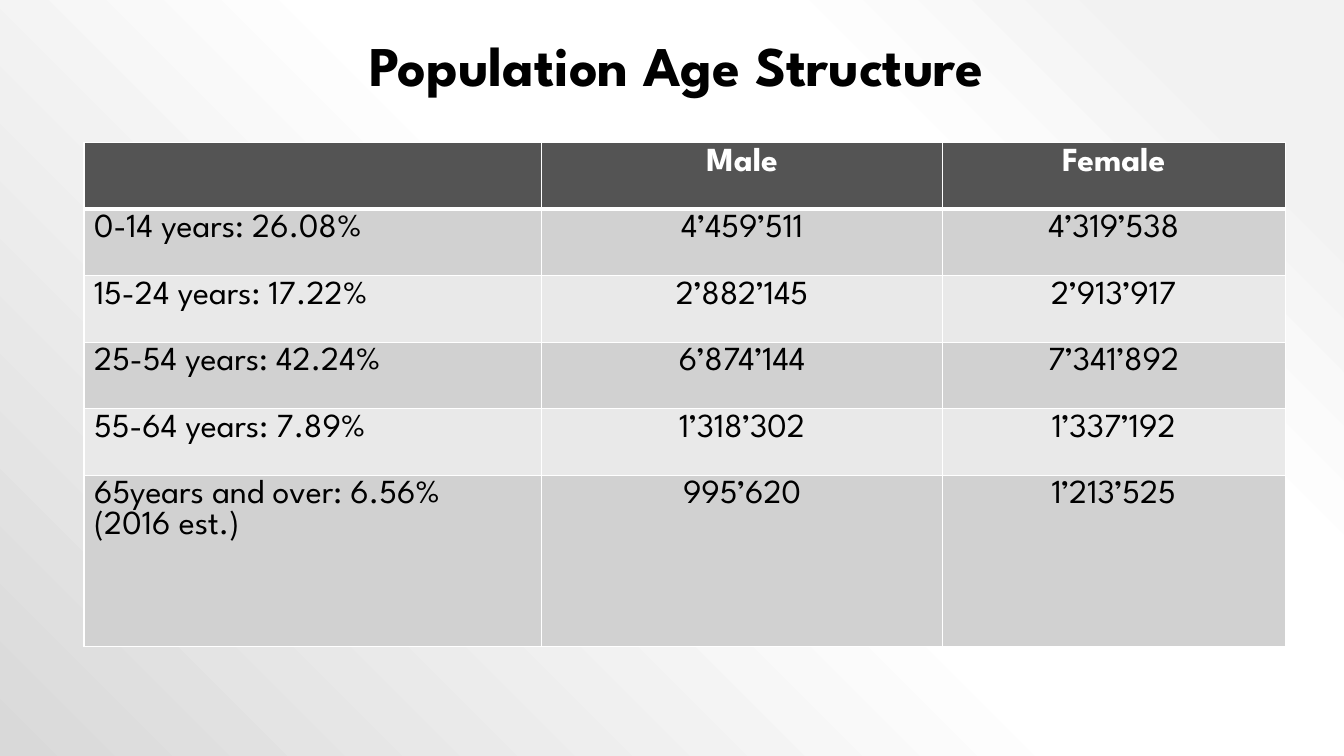
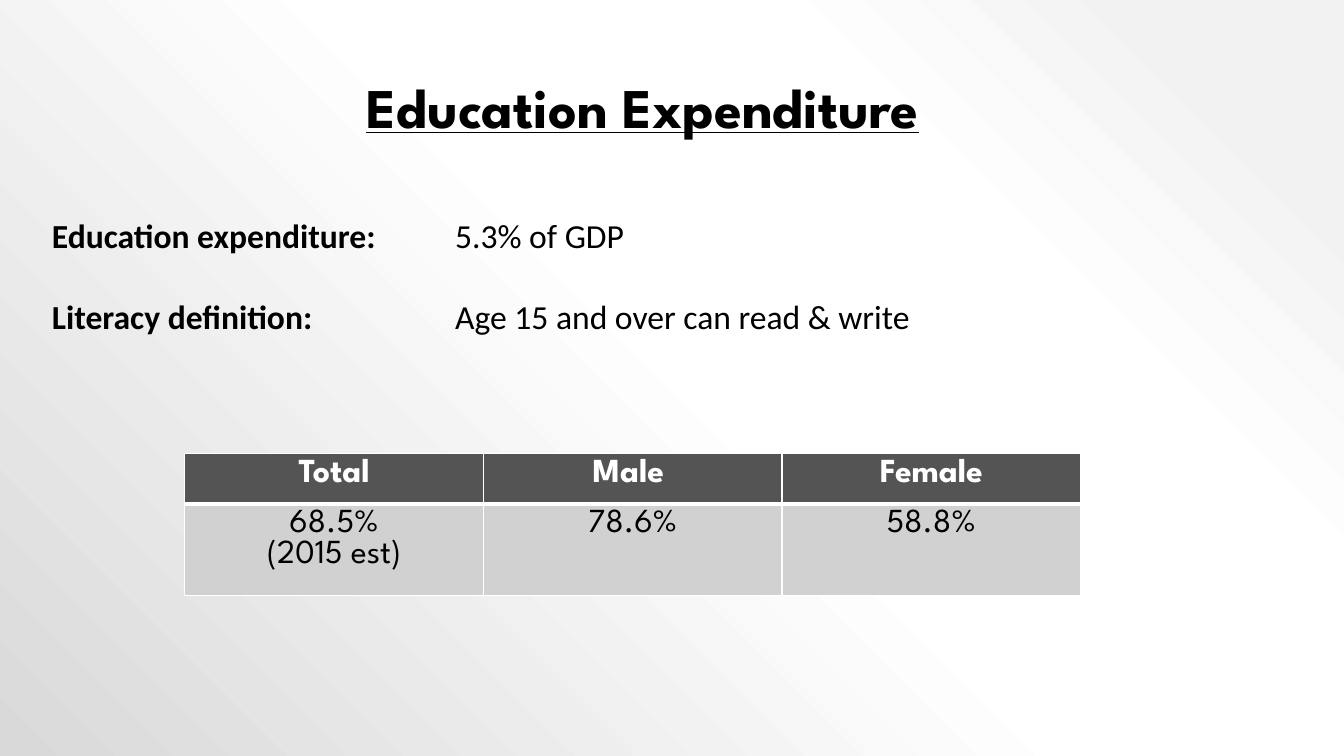
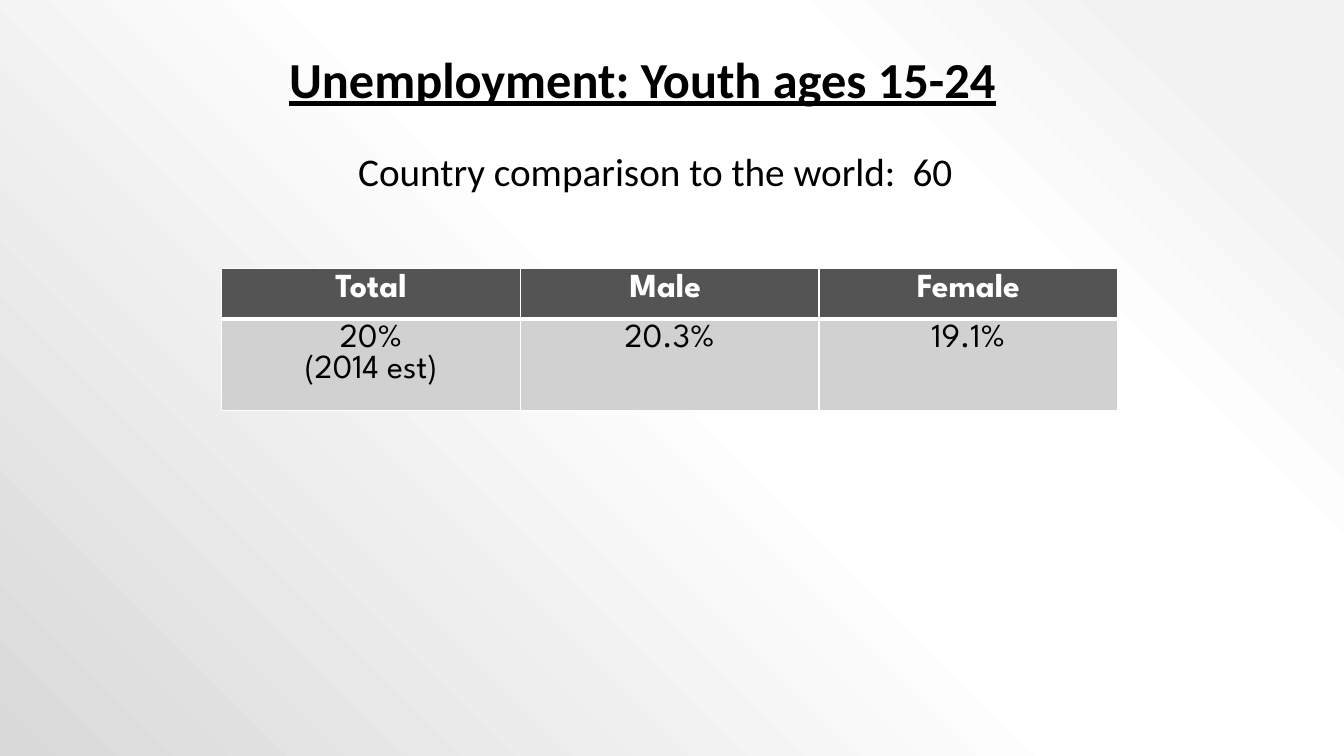
"""Builds three slides on population, education and youth unemployment."""
from dataclasses import dataclass

from lxml.etree import SubElement
from pptx import Presentation
from pptx.dml.color import RGBColor
from pptx.enum.text import MSO_ANCHOR, MSO_AUTO_SIZE, PP_ALIGN
from pptx.oxml import parse_xml
from pptx.oxml.ns import nsdecls, qn
from pptx.util import Emu, Inches, Pt


@dataclass(frozen=True)
class Theme:
    """Colours, fonts and type sizes shared by all slides."""
    ink: str = "000000"
    paper: str = "FFFFFF"
    header: str = "545454"
    bands: tuple = ("D1D1D1", "E9E9E9")
    glow: tuple = ((10, "F2F2F2"), (28, "FFFFFF"), (48, "FFFFFF"), (100, "D9D9D9"))
    display: str = "League Spartan"
    plain: str = "Calibri"
    title: int = 40
    subtitle: int = 36
    lead: int = 28
    body: int = 24
    rule: int = 1
    header_rule: int = 3


class Deck:
    """Holds the theme and current slide; lengths are cells of a 160 by 90 grid."""

    CELL = Inches(1) / 12

    def __init__(self, theme):
        self.theme = theme
        self.show = Presentation()
        self.show.slide_width = self.grid(160)
        self.show.slide_height = self.grid(90)
        self.slide = None
        self.backdrop()

    def grid(self, cells):
        """Turns grid cells into a length."""
        return Emu(round(cells * self.CELL))

    def backdrop(self):
        """Gives every slide a round gradient from the top right corner."""
        background = self.show.slide_master.background
        background.fill.solid()
        stops = "".join(
            f'<a:gs pos="{share * 1000}"><a:srgbClr val="{colour}"/></a:gs>'
            for share, colour in self.theme.glow)
        glow = parse_xml(
            f'<a:gradFill {nsdecls("a")} rotWithShape="1"><a:gsLst>{stops}</a:gsLst>'
            '<a:path path="circle"><a:fillToRect l="100000" b="100000"/></a:path>'
            '</a:gradFill>')
        solid = next(self.show.slide_master.element.iter(qn("p:bgPr")))[0]
        solid.getparent().replace(solid, glow)

    def new_slide(self):
        """Starts a blank slide."""
        self.slide = self.show.slides.add_slide(self.show.slide_layouts[6])

    def run(self, paragraph, words, font, size, colour=None, bold=False, underline=False):
        """Adds one styled run."""
        run = paragraph.add_run()
        run.text = words
        run.font.name = font
        run.font.size = Pt(size)
        run.font.bold = bold
        run.font.underline = underline
        run.font.color.rgb = RGBColor.from_string(colour or self.theme.ink)

    def frame(self, place, grow=False):
        """Adds a wrapping text box and returns its frame."""
        frame = self.slide.shapes.add_textbox(*map(self.grid, place)).text_frame
        frame.word_wrap = True
        frame.vertical_anchor = MSO_ANCHOR.TOP
        frame.auto_size = MSO_AUTO_SIZE.SHAPE_TO_FIT_TEXT if grow else MSO_AUTO_SIZE.NONE
        return frame

    def title(self, words, place, font, size, before=0, underline=True):
        """Adds a bold centred heading."""
        heading = self.frame(place).paragraphs[0]
        heading.alignment = PP_ALIGN.CENTER
        heading.line_spacing = 0.9
        heading.space_before = Pt(before)
        self.run(heading, words, font, size, bold=True, underline=underline)

    def lead(self, words, place):
        """Adds a centred line under the heading."""
        line = self.frame(place, grow=True).paragraphs[0]
        line.alignment = PP_ALIGN.CENTER
        self.run(line, words, self.theme.plain, self.theme.lead)

    def facts(self, pairs, place, tab, gap):
        """Adds bold labels with their values at a shared tab stop."""
        frame = self.frame(place, grow=True)
        for index, (label, value) in enumerate(pairs):
            fact = frame.add_paragraph() if index else frame.paragraphs[0]
            fact.space_before = Pt(gap if index else 0)
            stops = SubElement(fact._p.get_or_add_pPr(), qn("a:tabLst"))
            SubElement(stops, qn("a:tab"), pos=str(self.grid(tab)), algn="l")
            self.run(fact, label + "\t", self.theme.plain, self.theme.body, bold=True)
            self.run(fact, value, self.theme.plain, self.theme.body)

    def borders(self, cell, bottom):
        """Draws the four cell borders."""
        widths = {"L": self.theme.rule, "R": self.theme.rule,
                  "T": self.theme.rule, "B": bottom}
        for index, (side, width) in enumerate(widths.items()):
            cell._tc.get_or_add_tcPr().insert(index, parse_xml(
                f'<a:ln{side} {nsdecls("a")} w="{Pt(width)}"><a:solidFill>'
                f'<a:srgbClr val="{self.theme.paper}"/></a:solidFill></a:ln{side}>'))

    def cell(self, cell, words, is_header, fill, align):
        """Fills one table cell."""
        theme = self.theme
        cell.fill.solid()
        cell.fill.fore_color.rgb = RGBColor.from_string(fill)
        self.borders(cell, theme.header_rule if is_header else theme.rule)
        for index, line in enumerate(words.split("\n") if words else []):
            frame = cell.text_frame
            paragraph = frame.add_paragraph() if index else frame.paragraphs[0]
            paragraph.alignment = align
            self.run(paragraph, line, theme.display, theme.body,
                     theme.paper if is_header else theme.ink, bold=is_header)

    def table(self, rows, corner, widths, heights, labelled=False):
        """Adds a table with a dark header and banded rows."""
        place = (*corner, sum(widths), sum(heights))
        table = self.slide.shapes.add_table(
            len(rows), len(widths), *map(self.grid, place)).table
        table.first_row = table.horz_banding = False
        for column, width in zip(table.columns, widths):
            column.width = self.grid(width)
        for r, (row, height) in enumerate(zip(rows, heights)):
            table.rows[r].height = self.grid(height)
            fill = self.theme.bands[(r - 1) % 2] if r else self.theme.header
            for c, words in enumerate(row):
                align = PP_ALIGN.LEFT if labelled and c == 0 else PP_ALIGN.CENTER
                self.cell(table.cell(r, c), words, r == 0, fill, align)

    def rates(self, shares, corner):
        """Adds a table of total, male and female rates."""
        self.table([("Total", "Male ", "Female"), shares], corner,
                   [320 / 9] * 3, [5.9, 10.9])


def main():
    """Builds and saves the deck."""
    theme = Theme()
    deck = Deck(theme)

    deck.new_slide()
    deck.table([
        ("", "Male", "Female"),
        ("0-14 years: 26.08%", "4’459’511", "4’319’538"),
        ("15-24 years: 17.22%", "2’882’145", "2’913’917"),
        ("25-54 years: 42.24%", "6’874’144", "7’341’892"),
        ("55-64 years: 7.89%", "1’318’302", "1’337’192"),
        ("65years and over: 6.56%\n(2016 est.)", "995’620", "1’213’525"),
    ], (10, 17), [54.5, 47.7, 40.8], [7.92] * 5 + [20.4], labelled=True)
    deck.title("Population Age Structure", (30, 4, 101, 10),
               theme.display, theme.title, before=10, underline=False)

    deck.new_slide()
    deck.title("Education Expenditure", (25, 9, 103, 15),
               theme.display, theme.title, before=10)
    deck.facts([
        ("Education expenditure: ", "5.3% of GDP"),
        ("Literacy definition: ", "Age 15 and over can read & write"),
    ], (5, 25, 148, 20.6), tab=48, gap=29)
    deck.rates(("68.5%\n(2015 est)", "78.6%", "58.8%"), (22, 54))

    deck.new_slide()
    deck.rates(("20%\n(2014 est)", "20.3%", "19.1%"), (26.4, 32))
    deck.title("Unemployment: Youth ages 15-24", (25, 6, 103, 15),
               theme.plain, theme.subtitle)
    deck.lead("Country comparison to the world: \t60", (4, 17, 148, 6.8))

    deck.show.save("out.pptx")


if __name__ == "__main__":
    main()
